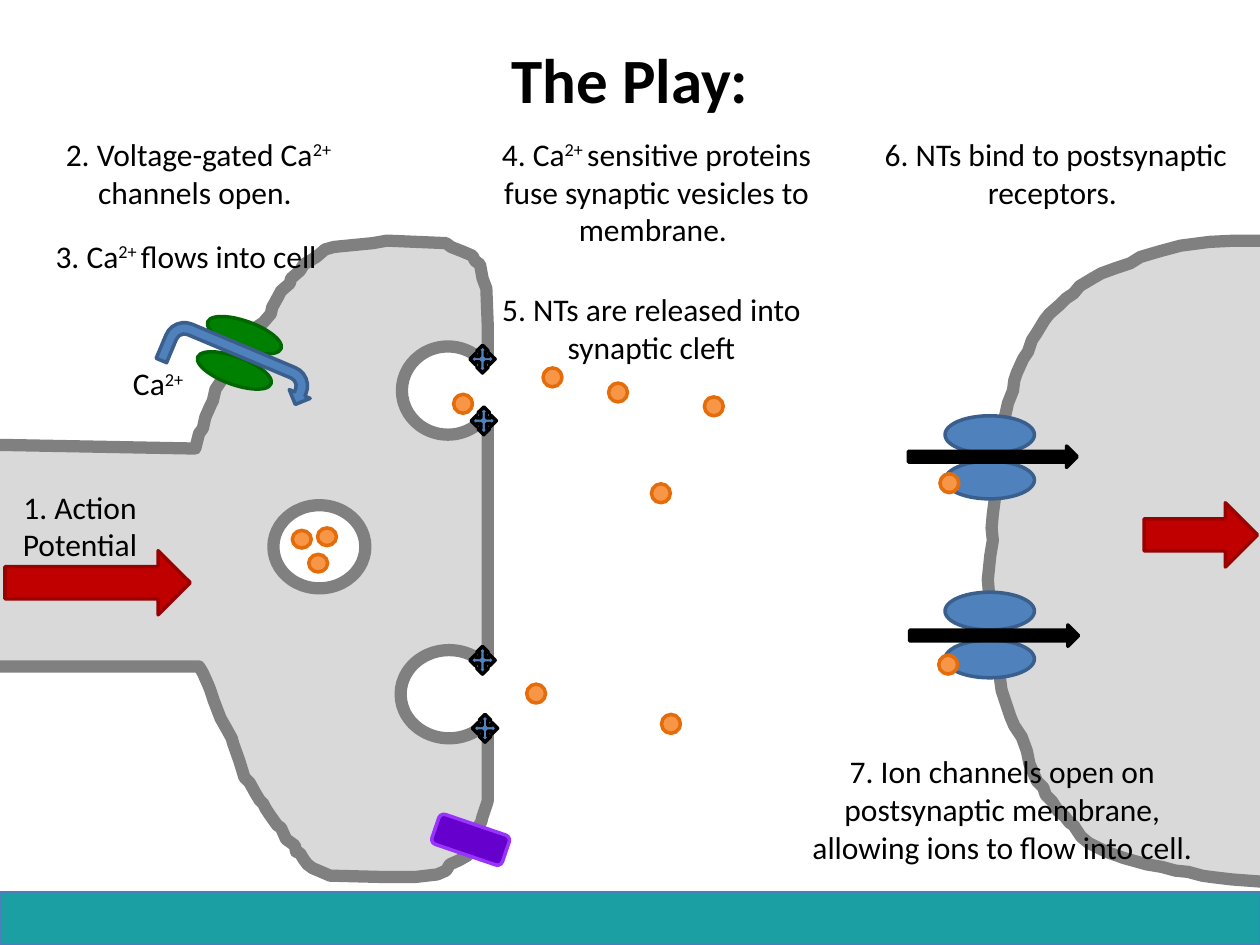
import pptx
import pptx.util
import pptx.dml.color
import pptx.enum.shapes
import pptx.enum.text
from lxml import etree

Inches = pptx.util.Inches
Pt = pptx.util.Pt
RGB = pptx.dml.color.RGBColor.from_string
KIND = pptx.enum.shapes.MSO_SHAPE
CENTER = pptx.enum.text.PP_ALIGN.CENTER
MIDDLE = pptx.enum.text.MSO_ANCHOR.MIDDLE

COLORS = {
    "black": "000000", "white": "FFFFFF", "footer": "1C9FA3", "footer_line": "4B7EBC",
    "cell": "D9D9D9", "membrane": "808080", "calcium_channel": "008000",
    "calcium_channel_line": "006600", "transmitter": "F79646", "transmitter_line": "E46C0A",
    "signal": "C00000", "signal_line": "990000", "blue": "4F81BD", "blue_line": "3A5F8C",
    "purple": "6600CC", "purple_line": "9933FF",
}

deck = pptx.Presentation()
deck.slide_width, deck.slide_height = Inches(10), Inches(7.5)
page = deck.slides.add_slide(deck.slide_layouts[6])


def paint(shape, fill, line=None, width=2, rotation=0):
    """Give a shape its fill, a round-joined outline and a rotation, without shadow."""
    shape.shadow.inherit = False
    shape.rotation = rotation
    shape.fill.solid()
    shape.fill.fore_color.rgb = RGB(COLORS[fill])
    if line is None:
        shape.line.fill.background()
        return
    shape.line.color.rgb = RGB(COLORS[line])
    shape.line.width = Pt(width)
    outline = shape.line._get_or_add_ln()
    etree.SubElement(outline, pptx.oxml.ns.qn("a:round"))


def add_text(place, runs, size=18, bold=False):
    """Add centred text; every second run is superscript."""
    box = page.shapes.add_textbox(*map(Inches, place))
    frame = box.text_frame
    frame.word_wrap = True
    para = frame.paragraphs[0]
    para.alignment = CENTER
    para.font.name, para.font.size, para.font.bold = "Calibri", Pt(size), bold
    para.font.color.rgb = RGB(COLORS["black"])
    for index, text in enumerate(runs):
        span = para.add_run()
        span.text = text
        if index % 2:
            span._r.get_or_add_rPr().set("baseline", "30000")
    return frame


# Footer band keeps the theme shadow
footer = page.shapes.add_shape(KIND.RECTANGLE, 0, Inches(7.08), Inches(10), Inches(0.42))
footer.fill.solid()
footer.fill.fore_color.rgb = RGB(COLORS["footer"])
footer.line.color.rgb = RGB(COLORS["footer_line"])
footer.line.width = Pt(0.75)

title = add_text((0, 0, 10, 1.25), ["The Play:"], 36, True)
title.vertical_anchor = MIDDLE

# Cell outlines, in inches
presynaptic = [
    (-0.07, 3.53), (1.55, 3.56), (1.58, 3.44), (1.61, 3.4), (1.63, 3.31), (1.67, 3.22),
    (1.69, 3.18), (1.71, 3.09), (1.77, 3), (1.85, 2.88), (1.9, 2.8), (1.94, 2.72),
    (2, 2.65), (2.03, 2.6), (2.09, 2.56), (2.15, 2.49), (2.16, 2.44), (2.21, 2.35),
    (2.23, 2.31), (2.3, 2.25), (2.31, 2.21), (2.38, 2.15), (2.41, 2.1), (2.51, 2.04),
    (2.58, 1.98), (2.65, 1.96), (2.96, 1.93), (3.07, 1.91), (3.54, 1.93), (3.58, 1.96),
    (3.68, 2), (3.75, 2.03), (3.77, 2.07), (3.81, 2.1), (3.83, 2.21), (3.86, 2.29),
    (3.87, 2.56), (3.87, 6.36), (3.83, 6.48), (3.82, 6.52), (3.77, 6.61), (3.73, 6.7),
    (3.71, 6.79), (3.64, 6.83), (3.57, 6.86), (3.54, 6.91), (3.47, 6.94), (3.3, 6.96),
    (3.02, 6.96), (2.62, 6.95), (2.55, 6.92), (2.48, 6.89), (2.44, 6.86), (2.41, 6.82),
    (2.38, 6.77), (2.35, 6.76), (2.34, 6.71), (2.27, 6.66), (2.23, 6.57), (2.2, 6.55),
    (2.15, 6.48), (2.11, 6.42), (2.09, 6.38), (2.06, 6.35), (2.03, 6.3), (1.98, 6.21),
    (1.94, 6.17), (1.9, 6.04), (1.85, 5.9), (1.84, 5.86), (1.79, 5.77), (1.75, 5.7),
    (1.7, 5.57), (1.67, 5.48), (1.65, 5.43), (1.61, 5.34), (1.58, 5.29), (-0.08, 5.29),
]
postsynaptic = [
    (10.05, 7), (9.78, 6.98), (9.61, 6.96), (9.54, 6.95), (9.43, 6.92), (9.33, 6.91),
    (9.22, 6.88), (9.1, 6.86), (8.92, 6.81), (8.78, 6.76), (8.72, 6.73), (8.64, 6.69),
    (8.58, 6.64), (8.52, 6.55), (8.49, 6.53), (8.45, 6.48), (8.4, 6.44), (8.35, 6.36),
    (8.3, 6.31), (8.28, 6.25), (8.23, 6.2), (8.17, 6.06), (8.15, 5.96), (8.11, 5.85),
    (8.05, 5.76), (8.02, 5.69), (7.99, 5.6), (7.95, 5.48), (7.94, 5.41), (7.92, 5.2),
    (7.88, 5.11), (7.87, 4.95), (7.84, 4.6), (7.86, 4.41), (7.88, 4.29), (7.87, 4.19),
    (7.88, 4.08), (7.9, 3.93), (7.92, 3.69), (7.94, 3.48), (7.98, 3.29), (8, 3.2),
    (8.04, 3.1), (8.05, 3.02), (8.07, 2.96), (8.12, 2.85), (8.16, 2.79), (8.19, 2.7),
    (8.23, 2.64), (8.29, 2.54), (8.33, 2.49), (8.41, 2.42), (8.46, 2.37), (8.52, 2.33),
    (8.57, 2.27), (8.67, 2.21), (8.74, 2.17), (8.85, 2.13), (8.97, 2.09), (9.05, 2.04),
    (9.15, 2.01), (9.22, 1.99), (9.37, 1.95), (9.6, 1.92), (9.8, 1.91), (10.08, 1.91),
]
for outline in (presynaptic, postsynaptic):
    # The builder rounds to whole units, so the points go in as EMU
    points = [(Inches(x), Inches(y)) for x, y in outline]
    builder = page.shapes.build_freeform(*points[0], scale=1.0)
    builder.add_line_segments(points[1:], close=True)
    paint(builder.convert_to_shape(), "cell", "membrane", 7)

channel_paint = ("calcium_channel", "calcium_channel_line", 2, 290)
vesicle_paint = ("white", "membrane", 7)
transmitter_paint = ("transmitter", "transmitter_line")
signal_paint = ("signal", "signal_line")
blue_paint = ("blue", "blue_line")
ion_paint = ("black", "black")

stored = page.shapes.add_group_shape().shapes
vesicle = stored.add_shape(KIND.OVAL, *map(Inches, (2.17, 4.01, 0.73, 0.66)))
paint(vesicle, *vesicle_paint)
for left, top in [(2.32, 4.21), (2.52, 4.19), (2.45, 4.4)]:
    molecule = stored.add_shape(KIND.OVAL, *map(Inches, (left, top, 0.15, 0.14)))
    paint(molecule, *transmitter_paint)

parts = [
    (KIND.OVAL, (1.83, 2.35, 0.22, 0.62), channel_paint),
    (KIND.OVAL, (1.75, 2.63, 0.22, 0.62), channel_paint),
    (KIND.OVAL, (3.19, 2.75, 0.73, 0.7), vesicle_paint),
    (KIND.OVAL, (3.18, 5.16, 0.77, 0.7), vesicle_paint),
    (KIND.RECTANGLE, (3.68, 2.84, 0.41, 0.49), ("white",)),
    (KIND.RECTANGLE, (3.71, 5.25, 0.41, 0.49), ("white",)),
    (KIND.RIGHT_ARROW, (0.04, 4.37, 1.47, 0.51), signal_paint),
    (KIND.RIGHT_ARROW, (9.08, 3.99, 0.9, 0.51), signal_paint),
    (KIND.U_TURN_ARROW, (1.26, 2.74, 1.25, 0.36), blue_paint + (2, 22.8)),
    (KIND.ROUNDED_RECTANGLE, (3.44, 6.54, 0.59, 0.25), ("purple", "purple_line", 2, 18.8)),
]
for top in (5.08, 4.7, 3.66, 3.3):
    parts.append((KIND.OVAL, (7.5, top, 0.71, 0.3), blue_paint))
for left, top in [(4.83, 3.04), (4.18, 5.43), (5.25, 5.67), (5.59, 3.15), (5.17, 3.84),
                  (4.31, 2.92), (7.45, 5.2), (7.46, 3.76), (3.6, 3.13)]:
    parts.append((KIND.OVAL, (left, top, 0.15, 0.15), transmitter_paint))
for left, top in [(7.21, 3.54), (7.22, 4.96)]:
    parts.append((KIND.RIGHT_ARROW, (left, top, 1.34, 0.17), ion_paint))
for left, top in [(3.73, 2.74), (3.74, 3.23), (3.73, 5.13), (3.75, 5.67)]:
    parts.append((KIND.QUAD_ARROW, (left, top, 0.2, 0.22), ("blue", "black")))

for kind, place, style in parts:
    paint(page.shapes.add_shape(kind, *map(Inches, place)), *style)

notes = [
    ((-0.08, 3.82, 1.43, 0.71), ["1. Action Potential"]),
    ((0.92, 2.84, 0.67, 0.4), ["Ca", "2+"]),
    ((0.32, 1.02, 2.51, 0.71), ["2. Voltage-gated Ca", "2+ ", "channels open. "]),
    ((0.25, 1.83, 2.51, 0.4), ["3. Ca", "2+ ", "flows into cell "]),
    ((3.67, 1.02, 3.08, 1.01),
     ["4. Ca", "2+ ", "sensitive proteins fuse synaptic vesicles to membrane. "]),
    ((3.63, 2.25, 3.08, 0.71), ["5. NTs are released into synaptic cleft"]),
    ((6.67, 1.02, 3.42, 0.71), ["6. NTs bind to postsynaptic receptors. "]),
    ((6.33, 5.92, 3.25, 1.01),
     ["7. Ion channels open on postsynaptic membrane, allowing ions to flow into cell. "]),
]
for place, runs in notes:
    add_text(place, runs)

deck.save("out.pptx")
